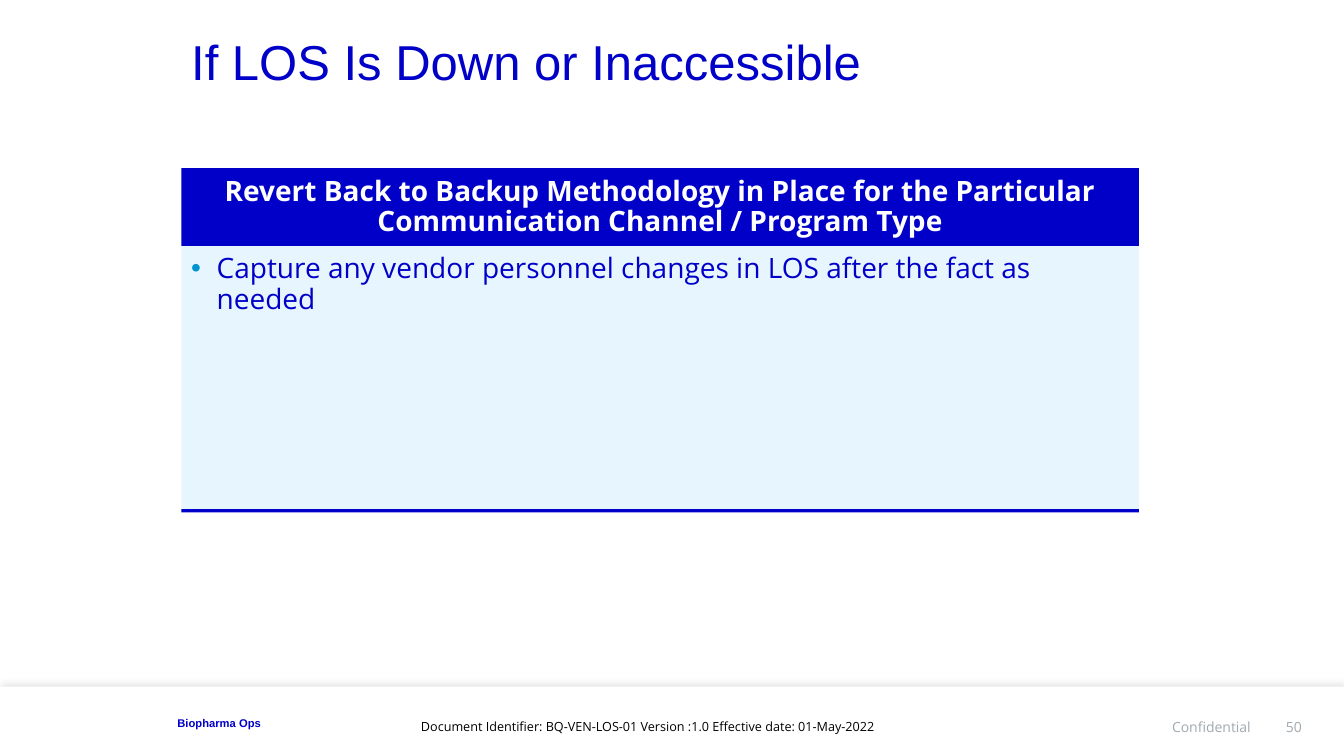
"""Build the slide on what to do when LOS is down or inaccessible."""
from dataclasses import dataclass

from lxml.etree import SubElement
from pptx import Presentation
from pptx.dml.color import RGBColor
from pptx.enum.shapes import MSO_SHAPE as Shape
from pptx.enum.text import MSO_ANCHOR as Anchor, MSO_AUTO_SIZE as AutoSize, PP_ALIGN as Align
from pptx.oxml.ns import qn
from pptx.util import Cm, Pt

TITLE = "If LOS Is Down or Inaccessible"
PANEL = {
    "heading": "Revert Back to Backup Methodology in Place for the Particular "
               "Communication Channel / Program Type",
    "bullet": "Capture any vendor personnel changes in LOS after the fact as needed",
}
FOOTER = {
    "team": "Biopharma Ops",
    "document": "Document Identifier: BQ-VEN-LOS-01 Version :1.0 Effective date: 01-May-2022",
    "notice": "Confidential",
    "page": "50",
}


@dataclass(frozen=True)
class Theme:
    """Colours, fonts and type sizes of the slide."""
    blue: str = "0000C9"
    pale: str = "E7F5FF"
    accent: str = "0093CF"
    white: str = "FFFFFF"
    black: str = "000000"
    grey: str = "A1AAB1"
    display: str = "Arial"
    text: str = "Open Sans"
    title_size: int = 35
    panel_size: int = 20
    page_size: int = 10
    document_size: int = 9
    team_size: int = 8


THEME = Theme()
WIDTH, HEIGHT = 33.87, 19.05
LEFT, PANEL_WIDTH = 4.57, 24.13
HEADING_TOP, HEADING_HEIGHT = 4.24, 1.96
BODY_TOP, BODY_HEIGHT = 6.17, 6.71
RULE_TOP, RULE_HEIGHT = 12.83, 0.08
BAND_TOP = 17.3
FOOTER_TOP, FOOTER_HEIGHT = 17.6, 0.94
DEFAULT_INSETS = (0.25, 0.13, 0.25, 0.13)
NO_INSETS = (0, 0, 0, 0)


def add_block(slide, box, color):
    block = slide.shapes.add_shape(Shape.RECTANGLE, *map(Cm, box))
    block.shadow.inherit = False
    block.fill.solid()
    block.fill.fore_color.rgb = RGBColor.from_string(color)
    block.line.fill.background()
    return block


def write(holder, words, size, color, font=THEME.text, bold=False, align=Align.LEFT,
          anchor=Anchor.TOP, insets=DEFAULT_INSETS, spacing=0.9):
    frame = holder.text_frame
    frame.word_wrap = True
    frame.vertical_anchor = anchor
    (frame.margin_left, frame.margin_top,
     frame.margin_right, frame.margin_bottom) = map(Cm, insets)
    paragraph = frame.paragraphs[0]
    paragraph.alignment = align
    paragraph.line_spacing = spacing
    run = paragraph.add_run()
    run.text = words
    run.font.name, run.font.size, run.font.bold = font, Pt(size), bold
    run.font.color.rgb = RGBColor.from_string(color)
    return paragraph


def add_label(slide, box, words, size, color, **style):
    label = slide.shapes.add_textbox(*map(Cm, box))
    write(label, words, size, color, **style)
    return label


def add_bullet(paragraph, color, indent):
    properties = paragraph._p.get_or_add_pPr()
    properties.set("marL", str(Cm(indent)))
    properties.set("indent", str(-Cm(indent)))
    bullet_color = SubElement(properties, qn("a:buClr"))
    SubElement(bullet_color, qn("a:srgbClr"), val=color)
    SubElement(properties, qn("a:buFont"), typeface=THEME.display)
    SubElement(properties, qn("a:buChar"), char="•")


def cast_shadow_up(block):
    effects = block._element.spPr.find(qn("a:effectLst"))
    shadow = SubElement(effects, qn("a:outerShdw"), blurRad=str(Pt(4)), dist=str(Pt(3)),
                        dir=str(270 * 60000), algn="b", rotWithShape="0")
    tint = SubElement(shadow, qn("a:srgbClr"), val=THEME.black)
    SubElement(tint, qn("a:alpha"), val="10000")


def add_footer(slide):
    cast_shadow_up(add_block(slide, (0, BAND_TOP, WIDTH, HEIGHT - BAND_TOP), THEME.white))
    corner = {"anchor": Anchor.BOTTOM, "insets": NO_INSETS}
    for part, left, width in (("page", 32.05, 0.76), ("notice", 16.66, 14.86)):
        add_label(slide, (left, FOOTER_TOP, width, FOOTER_HEIGHT), FOOTER[part],
                  THEME.page_size, THEME.grey, align=Align.RIGHT, **corner)
    add_label(slide, (4.47, 17.45, 11.51, FOOTER_HEIGHT), FOOTER["team"],
              THEME.team_size, THEME.blue, font=THEME.display, bold=True, **corner)
    document = add_label(slide, (10.36, 17.98, 12.14, 0.64), FOOTER["document"],
                         THEME.document_size, THEME.black, spacing=1.0)
    document.text_frame.word_wrap = False
    document.text_frame.auto_size = AutoSize.SHAPE_TO_FIT_TEXT


def add_panel(slide):
    body = add_block(slide, (LEFT, BODY_TOP, PANEL_WIDTH, BODY_HEIGHT), THEME.pale)
    bullet = write(body, PANEL["bullet"], THEME.panel_size, THEME.blue,
                   insets=(0.25, 0.25, 0.25, 0.13))
    bullet.space_after = Pt(6)
    add_bullet(bullet, THEME.accent, 0.64)
    header = add_block(slide, (LEFT, HEADING_TOP, PANEL_WIDTH, HEADING_HEIGHT), THEME.blue)
    heading = write(header, PANEL["heading"], THEME.panel_size, THEME.white, bold=True,
                    align=Align.CENTER, anchor=Anchor.MIDDLE)
    heading.space_after = Pt(6)
    add_block(slide, (LEFT, RULE_TOP, PANEL_WIDTH, RULE_HEIGHT), THEME.blue)


def main():
    deck = Presentation()
    deck.slide_width, deck.slide_height = Cm(WIDTH), Cm(HEIGHT)
    slide = deck.slides.add_slide(deck.slide_layouts[6])
    add_footer(slide)
    add_label(slide, (LEFT, -0.2, 25.3, 3.68), TITLE, THEME.title_size, THEME.blue,
              font=THEME.display, anchor=Anchor.MIDDLE)
    add_panel(slide)
    deck.save("out.pptx")


if __name__ == "__main__":
    main()
